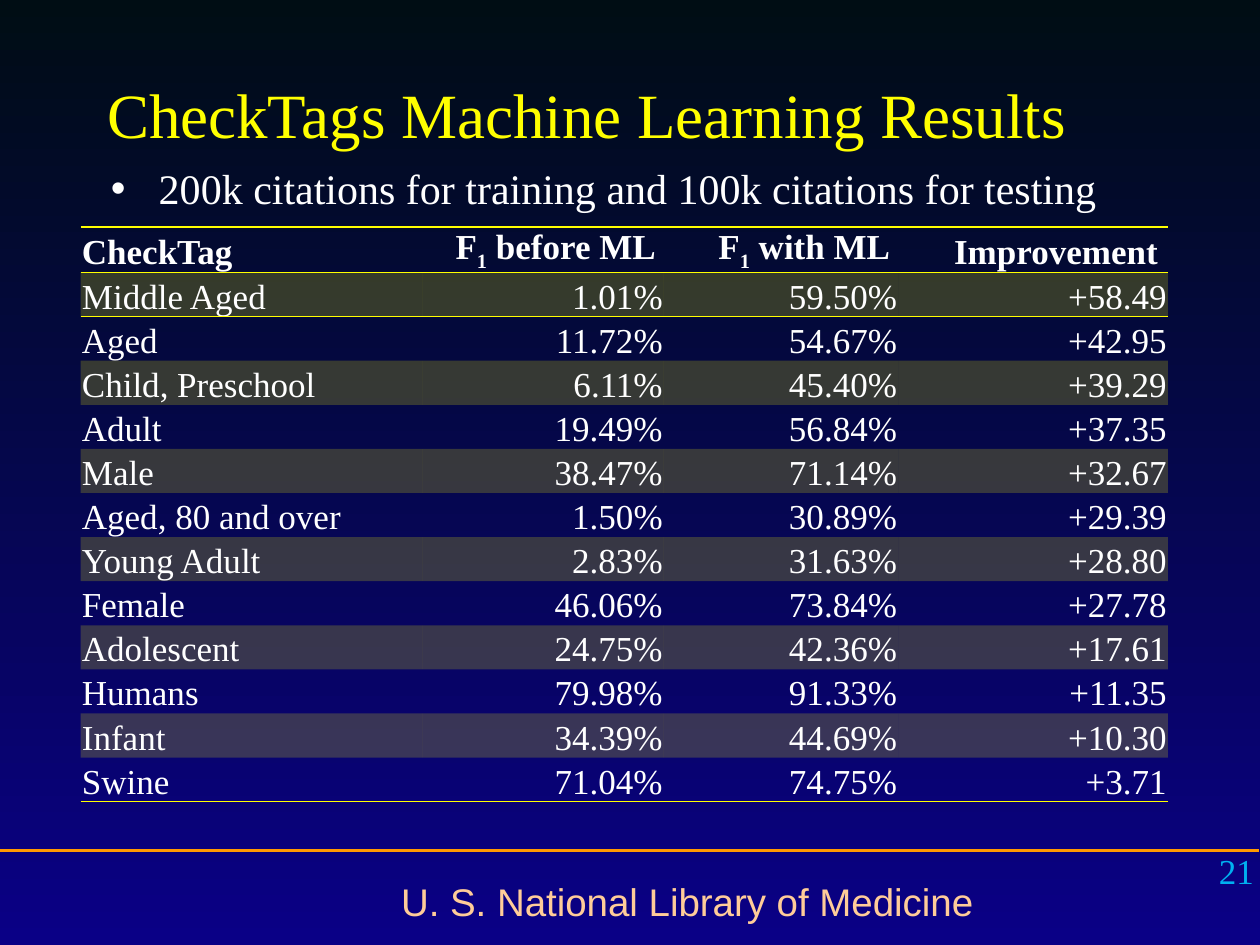
from lxml import etree
from pptx import Presentation
from pptx.dml.color import RGBColor
from pptx.enum.shapes import MSO_CONNECTOR
from pptx.enum.text import MSO_ANCHOR, MSO_AUTO_SIZE, PP_ALIGN
from pptx.oxml.ns import qn
from pptx.util import Inches, Pt

LEFT, MID, RIGHT = PP_ALIGN.LEFT, PP_ALIGN.CENTER, PP_ALIGN.RIGHT
TOP, LOW = MSO_ANCHOR.TOP, MSO_ANCHOR.BOTTOM
SERIF, SANS = "Times New Roman", "Arial"
YELLOW, WHITE = "FFFF00", "FFFFFF"
PLAIN = "{2D5ABB26-0587-4C30-8999-92F81FD0307C}"  # table style without lines

# Content
TITLE = "CheckTags Machine Learning Results"
POINT = "200k citations for training and 100k citations for testing"
FOOTER = "U. S. National Library of Medicine"
PAGE = "21"
# Every second piece of a heading is a subscript
HEADS = [("CheckTag",), ("F", "1", " before ML "), ("F", "1", " with ML "),
         ("Improvement ",)]
ROWS = [
    ("Middle Aged", "1.01%", "59.50%", "+58.49"),
    ("Aged", "11.72%", "54.67%", "+42.95"),
    ("Child, Preschool", "6.11%", "45.40%", "+39.29"),
    ("Adult", "19.49%", "56.84%", "+37.35"),
    ("Male", "38.47%", "71.14%", "+32.67"),
    ("Aged, 80 and over", "1.50%", "30.89%", "+29.39"),
    ("Young Adult", "2.83%", "31.63%", "+28.80"),
    ("Female", "46.06%", "73.84%", "+27.78"),
    ("Adolescent", "24.75%", "42.36%", "+17.61"),
    ("Humans", "79.98%", "91.33%", "+11.35"),
    ("Infant", "34.39%", "44.69%", "+10.30"),
    ("Swine", "71.04%", "74.75%", "+3.71"),
]
WIDTHS = [2.71, 1.92, 1.86, 2.14]
ROW_H = 0.35


def paint(color, code):
    color.rgb = RGBColor.from_string(code)


def style(para, size, code, align=LEFT, face=SERIF, bold=False):
    para.alignment = align
    para.space_before = Pt(0)
    for run in para.runs:
        font = run.font
        font.size, font.name, font.bold = Pt(size), face, bold
        paint(font.color, code)


def place(shape, left, top, width, height):
    shape.left, shape.top = Inches(left), Inches(top)
    shape.width, shape.height = Inches(width), Inches(height)


def write(shape, text, anchor=TOP):
    frame = shape.text_frame
    frame.word_wrap = True
    frame.auto_size = MSO_AUTO_SIZE.NONE
    frame.vertical_anchor = anchor
    frame.text = text
    return frame.paragraphs[0]


def add_text(slide, box, text):
    return write(slide.shapes.add_textbox(*map(Inches, box)), text)


def add_bullet(para, char, code):
    props = para._p.get_or_add_pPr()
    props.set("marL", str(Inches(0.38)))
    props.set("indent", str(-Inches(0.38)))
    color = etree.SubElement(props, qn("a:buClr"))
    etree.SubElement(color, qn("a:srgbClr"), val=code)
    etree.SubElement(props, qn("a:buChar"), char=char)


def add_border(cell, side, code):
    line = etree.SubElement(cell._tc.get_or_add_tcPr(), qn("a:" + side),
                            w=str(Pt(1)))
    fill = etree.SubElement(line, qn("a:solidFill"))
    etree.SubElement(fill, qn("a:srgbClr"), val=code)


def fill_cell(cell, row, col, parts):
    cell.margin_left = cell.margin_right = cell.margin_top = Inches(0.01)
    cell.margin_bottom = 0
    cell.vertical_anchor = LOW
    para = cell.text_frame.paragraphs[0]
    for i, part in enumerate(parts):
        run = para.add_run()
        run.text = part
        if i % 2:
            run._r.get_or_add_rPr().set("baseline", "-25000")
    style(para, 20, WHITE, RIGHT if col else LEFT, bold=row == 0)

    # Rules around the heading and under the last row
    if row < 2:
        add_border(cell, "lnT", YELLOW)
    if row in (0, len(ROWS)):
        add_border(cell, "lnB", YELLOW)

    # Tint on odd rows
    if row % 2:
        cell.fill.solid()
        paint(cell.fill.fore_color, YELLOW)
        tint = cell._tc.tcPr.find(qn("a:solidFill")).find(qn("a:srgbClr"))
        etree.SubElement(tint, qn("a:alpha"), val="20000")
    else:
        cell.fill.background()


def add_grid(slide):
    lines = [HEADS] + [[(text,) for text in row] for row in ROWS]
    table = slide.shapes.add_table(
        len(lines), len(WIDTHS), Inches(0.64), Inches(1.8),
        Inches(sum(WIDTHS)), Inches(ROW_H * len(lines))).table
    table.first_row = table.horz_banding = False
    table._tbl.tblPr.find(qn("a:tableStyleId")).text = PLAIN
    for col, width in zip(table.columns, WIDTHS):
        col.width = Inches(width)
    for r, line in enumerate(lines):
        table.rows[r].height = Inches(ROW_H)
        for c, parts in enumerate(line):
            fill_cell(table.cell(r, c), r, c, parts)


def main():
    deck = Presentation()
    deck.slide_width, deck.slide_height = Inches(10), Inches(7.5)
    slide = deck.slides.add_slide(deck.slide_layouts[1])

    # Background
    back = slide.background.fill
    back.gradient()
    back.gradient_angle = 270
    for stop, pos, code in zip(back.gradient_stops, (0, 1),
                               ("000D14", "0A0086")):
        stop.position = pos
        paint(stop.color, code)

    # Footer
    rule = slide.shapes.add_connector(
        MSO_CONNECTOR.STRAIGHT, 0, Inches(6.75), Inches(9.99), Inches(6.75))
    rule.line.width = Pt(1.5)
    paint(rule.line.color, "FF9900")
    etree.SubElement(rule._element.spPr, qn("a:effectLst"))
    style(add_text(slide, (2.32, 6.92, 6.27, 0.47), FOOTER),
          22, "FFCC99", MID, SANS)
    style(add_text(slide, (7.72, 6.69, 2.33, 0.52), PAGE),
          20, "00B0F0", RIGHT)

    # Title and bullet
    title, body = slide.placeholders
    place(title, 0.75, 0.5, 8.5, 0.75)
    style(write(title, TITLE, LOW), 36, YELLOW)
    place(body, 0.78, 1.24, 8.5, 0.54)
    para = write(body, POINT)
    add_bullet(para, "•", WHITE)
    style(para, 24, WHITE)

    add_grid(slide)
    deck.save("out.pptx")


if __name__ == "__main__":
    main()
